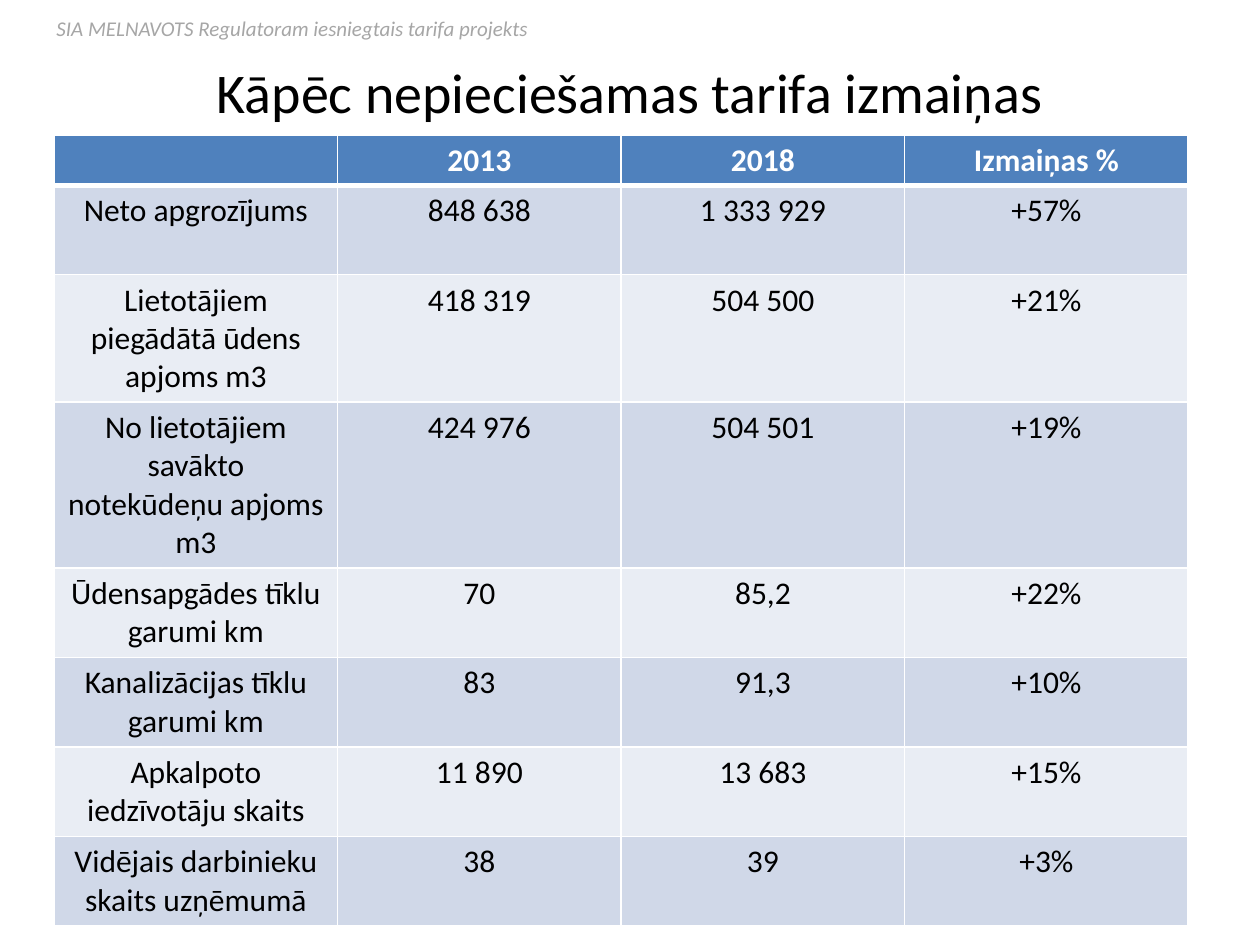
import pptx
import pptx.util
import pptx.dml.color
import pptx.enum.text
import pptx.oxml

Inches = pptx.util.Inches
RGBColor = pptx.dml.color.RGBColor
ALIGN = pptx.enum.text.PP_ALIGN
ANCHOR = pptx.enum.text.MSO_ANCHOR

BLACK = RGBColor(0x00, 0x00, 0x00)
WHITE = RGBColor(0xFF, 0xFF, 0xFF)
GRAY = RGBColor(0xA6, 0xA6, 0xA6)
BLUE = RGBColor(0x4F, 0x81, 0xBD)
BANDS = [RGBColor(0xD0, 0xD8, 0xE8), RGBColor(0xE9, 0xED, 0xF4)]

ROWS = [
    ("", "2013", "2018", "Izmaiņas %"),
    ("Neto apgrozījums", "848 638", "1 333 929", "+57%"),
    ("Lietotājiem piegādātā ūdens apjoms m3", "418 319", "504 500", "+21%"),
    ("No lietotājiem savākto notekūdeņu apjoms m3", "424 976", "504 501", "+19%"),
    ("Ūdensapgādes tīklu garumi km", "70", "85,2", "+22%"),
    ("Kanalizācijas tīklu garumi km", "83", "91,3", "+10%"),
    ("Apkalpoto iedzīvotāju skaits", "11 890", "13 683", "+15%"),
    ("Vidējais darbinieku skaits uzņēmumā", "38", "39", "+3%"),
]
HEIGHTS = [0.39, 0.71, 1.01, 1.32] + [0.71] * 4


def write(frame, text, align, size, color, **style):
    """Put one line of text in a frame; style holds more font values."""
    para = frame.paragraphs[0]
    para.alignment = align
    run = para.add_run()
    run.text = text
    run.font.color.rgb = color
    look = {"name": "Calibri", "size": pptx.util.Pt(size), **style}
    for key, value in look.items():
        setattr(run.font, key, value)


def edge(cell, side, width):
    """Draw a white line on one side (L, R, T or B) of a cell."""
    cell._tc.get_or_add_tcPr().append(pptx.oxml.parse_xml(
        f'<a:ln{side} xmlns:a="http://schemas.openxmlformats.org/drawingml/2006/main" '
        f'w="{pptx.util.Pt(width)}"><a:solidFill><a:srgbClr val="{WHITE}"/>'
        f'</a:solidFill></a:ln{side}>'))


deck = pptx.Presentation()
deck.slide_width = Inches(10)
deck.slide_height = Inches(7.5)
slide = deck.slides.add_slide(deck.slide_layouts[6])

# Title
title = slide.shapes.add_textbox(Inches(0.5), Inches(0.3), Inches(9), Inches(0.85)).text_frame
title.word_wrap = True
title.vertical_anchor = ANCHOR.MIDDLE
write(title, "Kāpēc nepieciešamas tarifa izmaiņas", ALIGN.CENTER, 32, BLACK)

# Table
table = slide.shapes.add_table(
    len(ROWS), len(ROWS[0]), Inches(0.43), Inches(1.07),
    Inches(9), Inches(sum(HEIGHTS))).table
for r, texts in enumerate(ROWS):
    table.rows[r].height = Inches(HEIGHTS[r])
    head = r == 0
    for c, text in enumerate(texts):
        cell = table.cell(r, c)
        for side in "LRTB":
            thick = (r, side) in [(0, "B"), (1, "T")]
            edge(cell, side, 3 if thick else 1)
        cell.fill.solid()
        cell.fill.fore_color.rgb = BLUE if head else BANDS[(r - 1) % 2]
        if text:
            write(cell.text_frame, text, ALIGN.CENTER, 18,
                  WHITE if head else BLACK, bold=head)

# Running header
note = slide.shapes.add_textbox(Inches(0.35), Inches(0.07), Inches(7), Inches(0.31)).text_frame
note.word_wrap = True
write(note, "SIA MELNAVOTS Regulatoram iesniegtais tarifa projekts",
      ALIGN.LEFT, 12, GRAY, italic=True)

deck.save("out.pptx")
